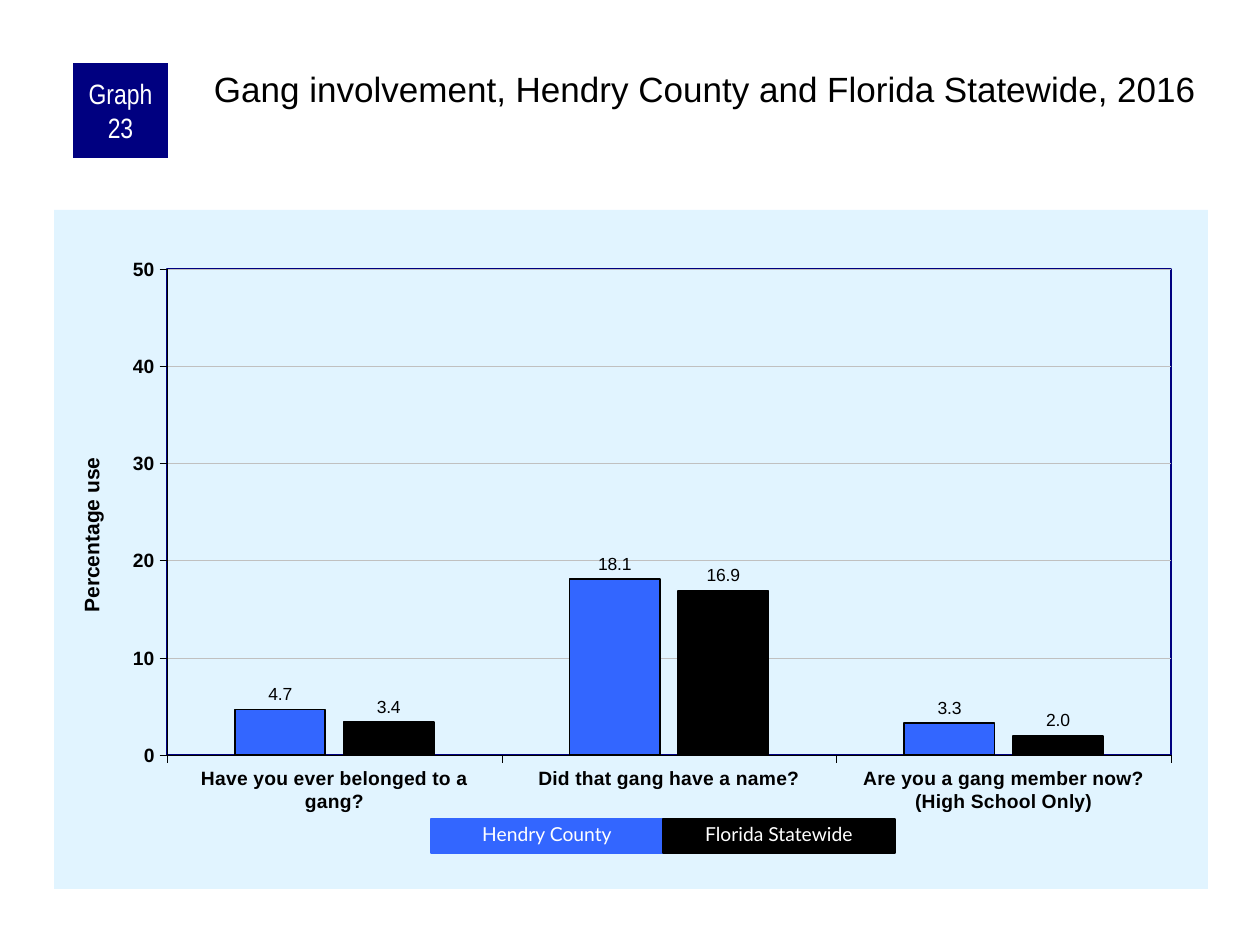
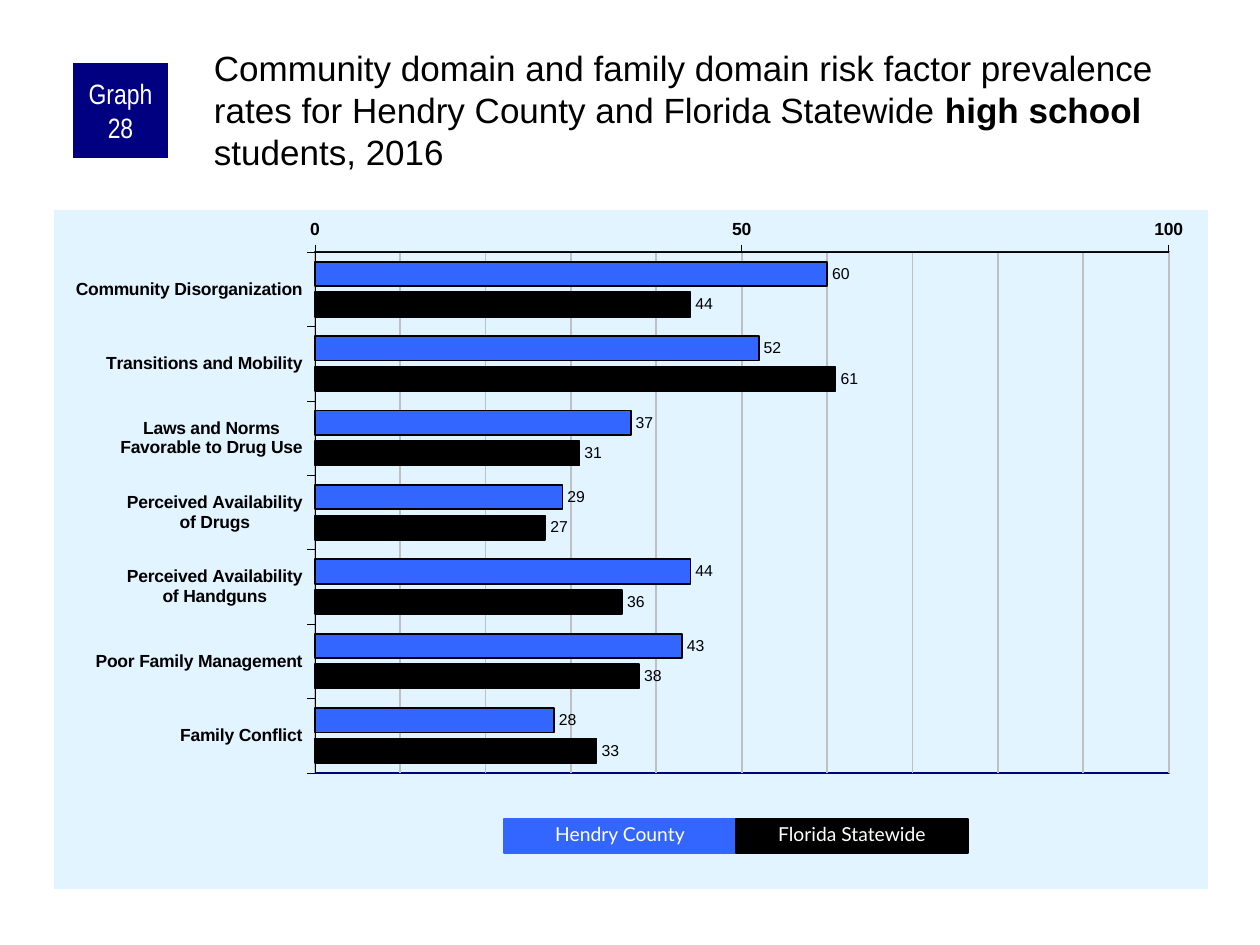
from dataclasses import dataclass

from lxml import etree
from pptx import Presentation
from pptx.chart.data import CategoryChartData
from pptx.dml.color import RGBColor
from pptx.enum.chart import (XL_AXIS_CROSSES, XL_CHART_TYPE,
                             XL_LABEL_POSITION, XL_TICK_MARK)
from pptx.enum.shapes import MSO_SHAPE
from pptx.enum.text import MSO_ANCHOR, PP_ALIGN
from pptx.util import Pt

COLUMNS = XL_CHART_TYPE.COLUMN_CLUSTERED
BARS = XL_CHART_TYPE.BAR_CLUSTERED
RECTANGLE = MSO_SHAPE.RECTANGLE
OUTSIDE_END = XL_LABEL_POSITION.OUTSIDE_END
TICK_OUT, TICK_NONE = XL_TICK_MARK.OUTSIDE, XL_TICK_MARK.NONE
AT_MAXIMUM = XL_AXIS_CROSSES.MAXIMUM
LEFT, CENTER = PP_ALIGN.LEFT, PP_ALIGN.CENTER
TOP, MIDDLE = MSO_ANCHOR.TOP, MSO_ANCHOR.MIDDLE

PX_PER_INCH = 126
CHART_NS = "http://schemas.openxmlformats.org/drawingml/2006/chart"
DRAW_NS = "http://schemas.openxmlformats.org/drawingml/2006/main"


@dataclass(frozen=True)
class Theme:
    black: str = "000000"
    white: str = "FFFFFF"
    navy: str = "000080"
    panel: str = "E1F4FF"
    county: str = "3366FF"
    state: str = "000000"
    grid: str = "C0C0C0"
    body_font: str = "Arial"
    tag_font: str = "Arial Narrow"
    key_font: str = "Lato"
    title_size: int = 20
    tag_size: int = 16
    axis_title_size: int = 12
    key_size: int = 11


THEME = Theme()
REGIONS = (("Hendry County", THEME.county), ("Florida Statewide", THEME.state))


def px(length):
    return round(length * 914400 / PX_PER_INCH)


def set_font(font, *, name, size, color, bold=False):
    font.name, font.size, font.bold = name, Pt(size), bold
    font.color.rgb = RGBColor.from_string(color)


def set_line(line, color, width):
    line.color.rgb = RGBColor.from_string(color)
    line.width = Pt(width)


def write(box, text, *, name, size, color, bold_part="", align=LEFT,
          anchor=TOP, insets=(13, 6, 13, 6), line_spacing=None):
    """Fill a shape with one paragraph; bold_part is the phrase set in bold."""
    frame = box.text_frame
    frame.word_wrap = True
    frame.vertical_anchor = anchor
    (frame.margin_left, frame.margin_top,
     frame.margin_right, frame.margin_bottom) = map(px, insets)
    para = frame.paragraphs[0]
    para.alignment = align
    if line_spacing:
        para.line_spacing = line_spacing
    before, found, after = text.partition(bold_part) if bold_part else (text, "", "")
    for part, bold in ((before, False), (found, True), (after, False)):
        if part:
            span = para.add_run()
            span.text = part
            set_font(span.font, name=name, size=size, color=color, bold=bold)


def area_format(fill=None, line=None, width=0):
    """Chart part properties, for which there is no public method."""
    def paint(color):
        if color is None:
            return "<a:noFill/>"
        return f'<a:solidFill><a:srgbClr val="{color}"/></a:solidFill>'
    return etree.fromstring(
        f'<c:spPr xmlns:c="{CHART_NS}" xmlns:a="{DRAW_NS}">{paint(fill)}'
        f'<a:ln w="{Pt(width)}">{paint(line)}</a:ln></c:spPr>')


def inner_layout(x, y, w, h):
    values = "".join(f'<c:{tag} val="{value}"/>'
                     for tag, value in zip("xywh", (x, y, w, h)))
    return etree.fromstring(
        f'<c:layout xmlns:c="{CHART_NS}"><c:manualLayout>'
        '<c:layoutTarget val="inner"/><c:xMode val="edge"/>'
        f'<c:yMode val="edge"/>{values}</c:manualLayout></c:layout>')


class GraphDeck:
    def __init__(self, theme):
        self.theme = theme
        self.deck = Presentation()
        self.deck.slide_width, self.deck.slide_height = px(1260), px(945)
        self.page = None

    def add_page(self):
        self.page = self.deck.slides.add_slide(self.deck.slide_layouts[6])

    def rectangle(self, left, top, width, height, fill, line=None):
        box = self.page.shapes.add_shape(
            RECTANGLE, px(left), px(top), px(width), px(height))
        box.shadow.inherit = False
        box.fill.solid()
        box.fill.fore_color.rgb = RGBColor.from_string(fill)
        if line:
            set_line(box.line, line, 0.75)
        else:
            box.line.fill.background()
        return box

    def header(self, number, title, top, bold_part=""):
        theme = self.theme
        tag = self.rectangle(73, 63, 95, 95, theme.navy)
        write(tag, f"Graph {number}", name=theme.tag_font, size=theme.tag_size,
              color=theme.white, align=CENTER, anchor=MIDDLE, insets=(6, 0, 6, 0))
        box = self.page.shapes.add_textbox(px(210), px(top), px(998), px(105))
        write(box, title, name=theme.body_font, size=theme.title_size,
              color=theme.black, bold_part=bold_part, insets=(4, 4, 0, 0))

    def key(self, left):
        theme, width = self.theme, 232
        for index, (region, color) in enumerate(REGIONS):
            box = self.rectangle(left + index * width, 819, width, 34, color, color)
            write(box, region, name=theme.key_font, size=theme.key_size,
                  color=theme.white, align=CENTER, line_spacing=0.9)

    def chart(self, kind, rows, *, layout, gap, overlap, label_size, label_format):
        theme = self.theme
        data = CategoryChartData()
        data.categories = [row[0] for row in rows]
        for index, (region, _) in enumerate(REGIONS, start=1):
            data.add_series(region, [row[index] for row in rows])
        chart = self.page.shapes.add_chart(
            kind, px(54), px(210), px(1154), px(679), data).chart
        chart.has_legend = chart.has_title = False
        set_font(chart.font, name=theme.body_font, size=label_size, color=theme.black)

        # Bars and their labels
        plot = chart.plots[0]
        plot.gap_width, plot.overlap = gap, overlap
        plot.vary_by_categories = False
        for series, (_, color) in zip(plot.series, REGIONS):
            series.invert_if_negative = False
            series.format.fill.solid()
            series.format.fill.fore_color.rgb = RGBColor.from_string(color)
            set_line(series.format.line, theme.black, 1)
        plot.has_data_labels = True
        labels = plot.data_labels
        labels.show_value, labels.position = True, OUTSIDE_END
        labels.number_format, labels.number_format_is_linked = label_format, False
        set_font(labels.font, name=theme.body_font, size=label_size, color=theme.black)

        # Panel colour, plot frame and plot position
        space = chart.element
        space.find(f"{{{CHART_NS}}}chart").addnext(area_format(theme.panel))
        plot_area = space.find(f".//{{{CHART_NS}}}plotArea")
        for old_layout in plot_area.findall(f"{{{CHART_NS}}}layout"):
            plot_area.remove(old_layout)
        plot_area.insert(0, inner_layout(*layout))
        plot_area.append(area_format(line=theme.navy, width=1))
        return chart

    def axes(self, chart, *, size, maximum, step, grid_width):
        theme = self.theme
        for axis in (chart.category_axis, chart.value_axis):
            axis.major_tick_mark, axis.minor_tick_mark = TICK_OUT, TICK_NONE
            set_line(axis.format.line, theme.black, 0.25)
            set_font(axis.tick_labels.font, name=theme.body_font, size=size,
                     color=theme.black, bold=True)
        scale = chart.value_axis
        scale.minimum_scale, scale.maximum_scale = 0, maximum
        scale.major_unit = step
        scale.has_major_gridlines = True
        set_line(scale.major_gridlines.format.line, theme.grid, grid_width)

    def minor_grid(self, chart, step, width):
        chart.value_axis.minor_unit = step
        chart.value_axis.has_minor_gridlines = True
        gridlines = chart.element.find(f".//{{{CHART_NS}}}minorGridlines")
        gridlines.append(area_format(line=self.theme.grid, width=width))

    def axis_title(self, axis, text):
        axis.has_title = True
        para = axis.axis_title.text_frame.paragraphs[0]
        span = para.add_run()
        span.text = text
        set_font(span.font, name=self.theme.body_font, bold=True,
                 size=self.theme.axis_title_size, color=self.theme.black)


def gang_page(graphs):
    graphs.add_page()
    chart = graphs.chart(
        COLUMNS,
        [("Have you ever belonged to a gang?", 4.7, 3.4),
         ("Did that gang have a name?", 18.1, 16.9),
         ("Are you a gang member now?\n(High School Only)", 3.3, 2.0)],
        layout=(0.098, 0.087, 0.87, 0.716), gap=150, overlap=-20,
        label_size=10, label_format="0.0")
    graphs.axes(chart, size=11, maximum=50, step=10, grid_width=0.25)
    graphs.axis_title(chart.value_axis, "Percentage use")
    graphs.header(23, "Gang involvement, Hendry County and Florida Statewide, 2016",
                  top=63)
    graphs.key(left=431)


def risk_page(graphs):
    graphs.add_page()
    chart = graphs.chart(
        BARS,
        [("Community Disorganization", 60, 44),
         ("Transitions and Mobility", 52, 61),
         ("Laws and Norms\nFavorable to Drug Use", 37, 31),
         ("Perceived Availability\nof Drugs", 29, 27),
         ("Perceived Availability\nof Handguns", 44, 36),
         ("Poor Family Management", 43, 38),
         ("Family Conflict", 28, 33)],
        layout=(0.226, 0.062, 0.74, 0.767), gap=80, overlap=-25,
        label_size=9, label_format="0")
    graphs.axes(chart, size=10, maximum=100, step=50, grid_width=1)
    graphs.minor_grid(chart, step=10, width=1)
    # First category on top, with the scale kept at the bottom
    chart.category_axis.reverse_order = True
    chart.category_axis.crosses = AT_MAXIMUM
    graphs.header(
        28, "Community domain and family domain risk factor prevalence rates for "
        "Hendry County and Florida Statewide high school students, 2016",
        top=42, bold_part="high school")
    graphs.key(left=504)


def main():
    graphs = GraphDeck(THEME)
    gang_page(graphs)
    risk_page(graphs)
    graphs.deck.save("out.pptx")


if __name__ == "__main__":
    main()
